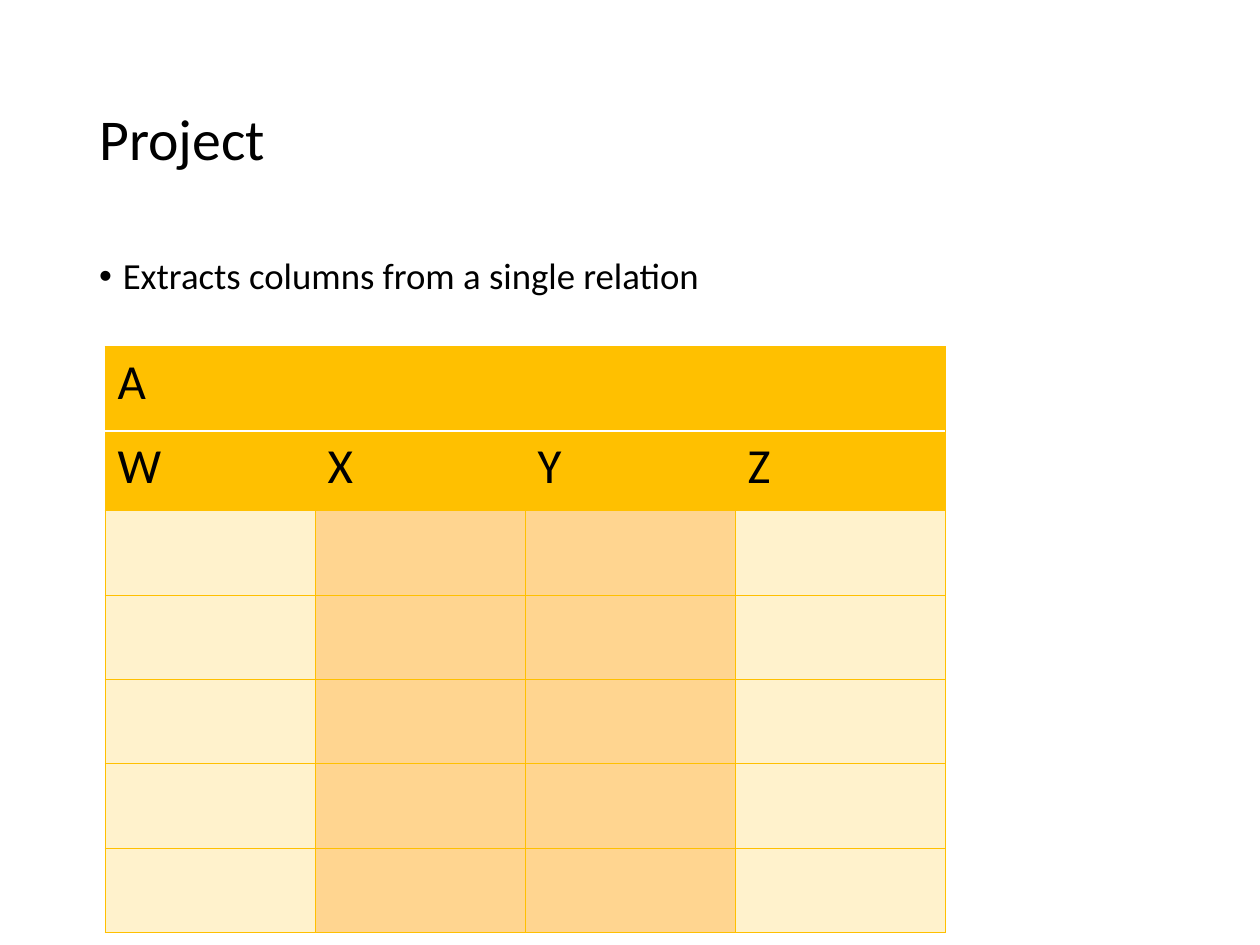
from pptx import Presentation
from pptx.dml.color import RGBColor
from pptx.enum.text import MSO_ANCHOR, PP_ALIGN
from pptx.oxml.ns import qn
from pptx.util import Pt
from lxml.etree import SubElement

FONT = "Calibri"
BLACK = RGBColor(0x00, 0x00, 0x00)
WHITE = RGBColor(0xFF, 0xFF, 0xFF)
GOLD = RGBColor(0xFF, 0xC0, 0x00)
CREAM = RGBColor(0xFF, 0xF2, 0xCC)
PROJECTED = RGBColor(0xFF, 0xD5, 0x90)


def add_run(paragraph, text, size):
    run = paragraph.add_run()
    run.text = text
    run.font.name = FONT
    run.font.size = Pt(size)
    run.font.bold = False
    run.font.color.rgb = BLACK


def add_border(cell, side, color, width):
    line = SubElement(cell._tc.get_or_add_tcPr(), qn(f"a:ln{side}"), w=str(Pt(width)))
    fill = SubElement(line, qn("a:solidFill"))
    SubElement(fill, qn("a:srgbClr"), val=str(color))


presentation = Presentation()
presentation.slide_width = Pt(720)
presentation.slide_height = Pt(540)
slide = presentation.slides.add_slide(presentation.slide_layouts[1])

# Title
title = slide.shapes.title
title.left, title.top, title.width, title.height = Pt(49.5), Pt(28.75), Pt(621), Pt(104.4)
title.text_frame.vertical_anchor = MSO_ANCHOR.MIDDLE
heading = title.text_frame.paragraphs[0]
heading.alignment = PP_ALIGN.LEFT
heading.line_spacing = 0.9
add_run(heading, "Project", 33)

# Definition
definition = slide.placeholders[1]
definition.left, definition.top, definition.width, definition.height = (
    Pt(49.5), Pt(143.75), Pt(621), Pt(342.6))
bullet = definition.text_frame.paragraphs[0]
bullet.line_spacing = 0.9
bullet.space_before = Pt(7.5)
bullet_format = bullet._p.get_or_add_pPr()
bullet_format.set("marL", str(Pt(13.5)))
bullet_format.set("indent", str(Pt(-13.5)))
SubElement(bullet_format, qn("a:buFont"), typeface="Arial")
SubElement(bullet_format, qn("a:buChar"), char="•")
add_run(bullet, "Extracts columns from a single relation", 21)

# Relation A, with the projected columns X and Y highlighted
row_heights = [48.3, 45.6] + [48.2] * 5
header_rows = [["A"], ["W", "X", "Y", "Z"]]
projected_columns = (1, 2)
relation = slide.shapes.add_table(
    len(row_heights), 4, Pt(60), Pt(198), Pt(480), Pt(sum(row_heights))).table
relation.first_row = False
relation.horz_banding = False

for row, height in enumerate(row_heights):
    relation.rows[row].height = Pt(height)
    for column in range(4):
        cell = relation.cell(row, column)
        for side in "LRTB":
            divider = (row, side) in ((0, "B"), (1, "T"))
            add_border(cell, side, WHITE if divider else GOLD, 1 if divider else 0.5)
        cell.fill.solid()
        if row < len(header_rows):
            cell.fill.fore_color.rgb = GOLD
        else:
            cell.fill.fore_color.rgb = PROJECTED if column in projected_columns else CREAM

# Relation name and column names
for row, names in enumerate(header_rows):
    for column, name in enumerate(names):
        add_run(relation.cell(row, column).text_frame.paragraphs[0], name, 28)

presentation.save("out.pptx")
